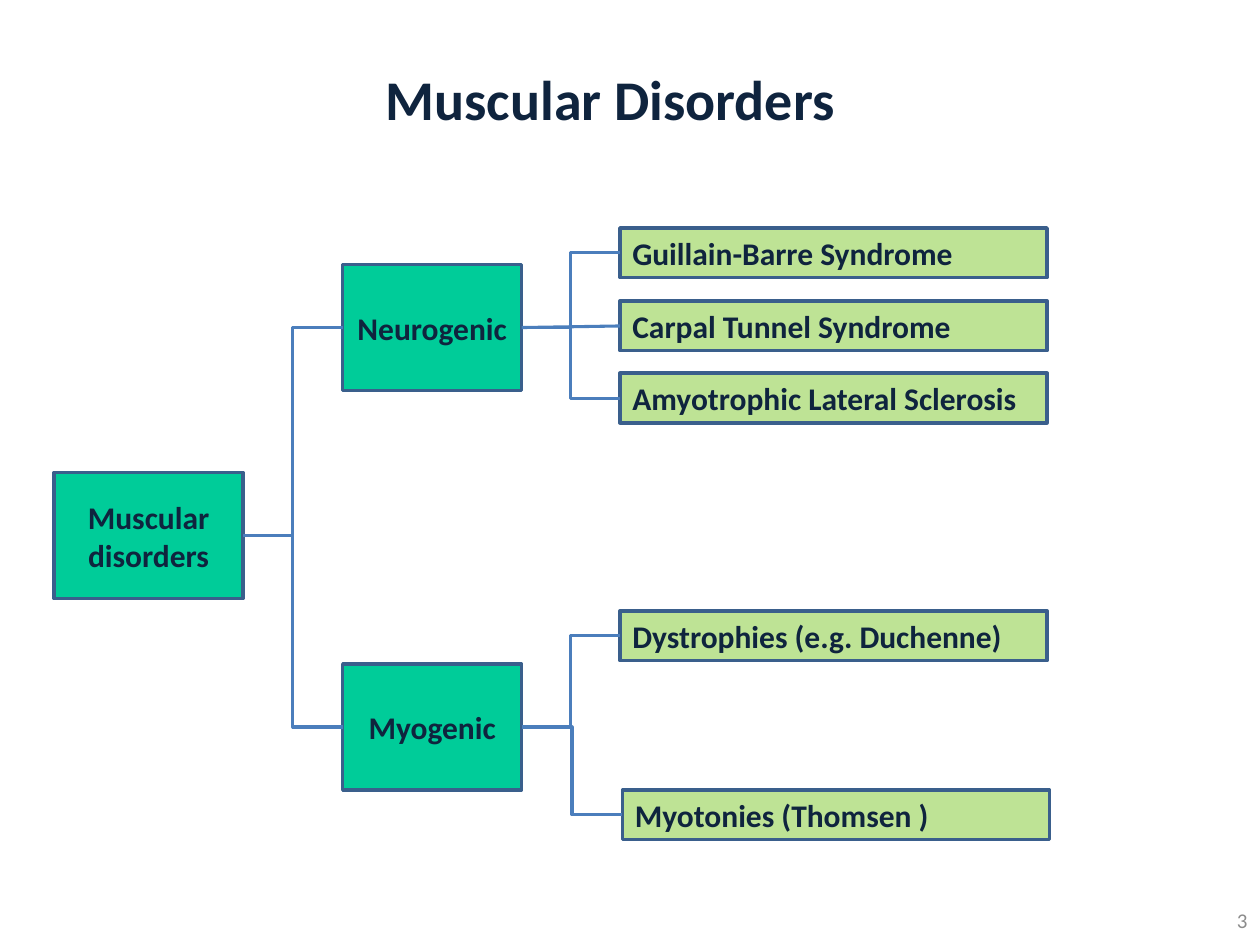
"""Build the Muscular Disorders classification tree slide."""
from lxml.etree import SubElement
from pptx import Presentation
from pptx.dml.color import RGBColor
from pptx.enum.shapes import MSO_CONNECTOR as Link, MSO_SHAPE as Shape
from pptx.enum.text import MSO_ANCHOR as Anchor, PP_ALIGN as Align
from pptx.oxml.ns import qn
from pptx.util import Inches, Pt

COLORS = {
    "ink": "0F243E",
    "number": "8C8C8C",
    "group": "00CC99",
    "disease": "BEE395",
    "border": "3A5F8C",
    "link": "4B7EBC",
}

deck = Presentation()
deck.slide_width, deck.slide_height = Inches(10), Inches(7.5)
page = deck.slides.add_slide(deck.slide_layouts[6])


def share(left, top, width, height):
    across, down = deck.slide_width / 100, deck.slide_height / 100
    return int(left * across), int(top * down), int(width * across), int(height * down)


def write(box, text, size, color, align, bold=True):
    frame = box.text_frame
    frame.word_wrap = True
    frame.vertical_anchor = Anchor.MIDDLE
    para = frame.paragraphs[0]
    para.alignment = align
    span = para.add_run()
    span.text = text
    span.font.name = "Calibri"
    span.font.size = Pt(size)
    span.font.bold = bold
    span.font.color.rgb = RGBColor.from_string(COLORS[color])


title = page.shapes.add_textbox(*share(14.6, 0, 67.7, 20.67))
write(title, "Muscular Disorders", 32, "ink", Align.CENTER)
number = page.shapes.add_textbox(*share(76.7, 94.67, 23.3, 5.33))
write(number, "3", 12, "number", Align.RIGHT, bold=False)

levels = {
    "root": (15, 13.33, "group", Align.CENTER),
    "type": (14.2, 13.33, "group", Align.CENTER),
    "disease": (33.9, 5.25, "disease", Align.LEFT),
}
tree = [
    ("Muscular disorders", "root", 4.3, 50, None),
    ("Neurogenic", "type", 27.2, 28, "Muscular disorders"),
    ("Myogenic", "type", 27.2, 70.27, "Muscular disorders"),
    ("Guillain-Barre Syndrome", "disease", 49.2, 24.13, "Neurogenic"),
    ("Carpal Tunnel Syndrome", "disease", 49.2, 31.87, "Neurogenic"),
    ("Amyotrophic Lateral Sclerosis", "disease", 49.2, 39.5, "Neurogenic"),
    ("Dystrophies (e.g. Duchenne)", "disease", 49.2, 64.67, "Myogenic"),
    ("Myotonies (Thomsen )", "disease", 49.4, 83.6, "Myogenic"),
]

boxes = {}
for label, level, left, top, parent in tree:
    width, height, fill, align = levels[level]
    box = page.shapes.add_shape(Shape.RECTANGLE, *share(left, top, width, height))
    box.shadow.inherit = False
    box.fill.solid()
    box.fill.fore_color.rgb = RGBColor.from_string(COLORS[fill])
    box.line.color.rgb = RGBColor.from_string(COLORS["border"])
    box.line.width = Pt(2)
    write(box, label, 18, "ink", align)
    boxes[label] = box

for label, level, left, top, parent in tree[1:]:
    kind = Link.STRAIGHT if label == "Carpal Tunnel Syndrome" else Link.ELBOW
    link = page.shapes.add_connector(kind, 0, 0, 0, 0)
    link.begin_connect(boxes[parent], 3)
    link.end_connect(boxes[label], 1)
    link.line.color.rgb = RGBColor.from_string(COLORS["link"])
    link.line.width = Pt(1.75)
    SubElement(link._element.spPr, qn("a:effectLst"))

deck.save("out.pptx")
